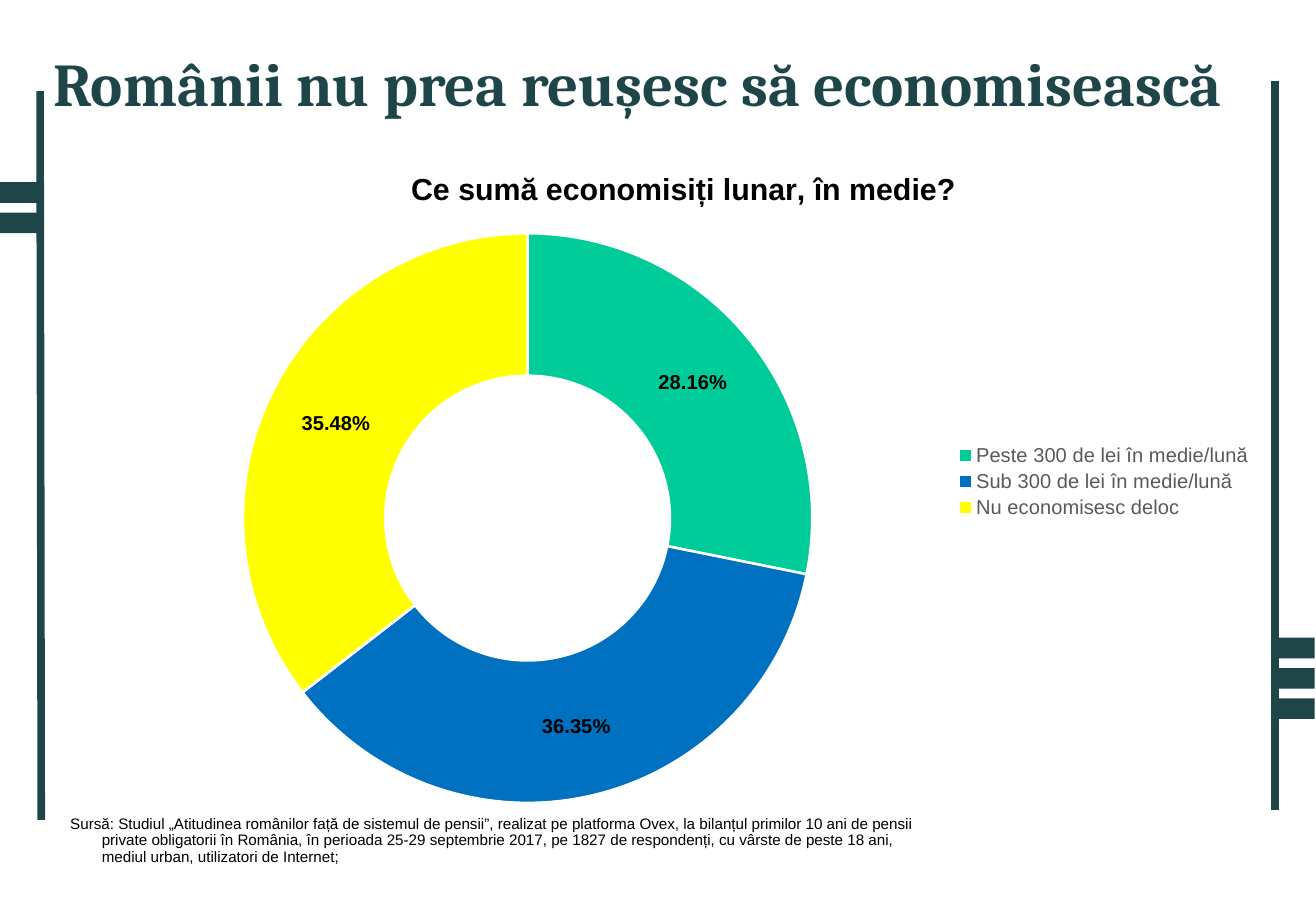
"""Build the slide on how much Romanians save each month."""
import pptx
import pptx.chart.data
import pptx.dml.color
import pptx.enum.chart
import pptx.enum.shapes
import pptx.enum.text
import pptx.util
from lxml import etree

COLORS = {"frame": "1E4649", "text": "000000", "legend": "595959", "gap": "FFFFFF"}
HEADLINE = "Românii nu prea reușesc să economisească"
QUESTION = "Ce sumă economisiți lunar, în medie?"
ANSWERS = [
    ("Peste 300 de lei în medie/lună", 0.2816, "00CC99"),
    ("Sub 300 de lei în medie/lună", 0.3635, "0070C0"),
    ("Nu economisesc deloc", 0.3548, "FFFF00"),
]
SOURCE_NOTE = (
    "Sursă: Studiul „Atitudinea românilor față de sistemul de pensii”, realizat pe "
    "platforma Ovex, la bilanțul primilor 10 ani de pensii private obligatorii în România, "
    "în perioada 25-29 septembrie 2017, pe 1827 de respondenți, cu vârste de peste 18 ani, "
    "mediul urban, utilizatori de Internet;"
)
WIDTH, HEIGHT = 10.84, 7.5
BAR_WIDTH, BAR_HEIGHT, BAR_STEP = 0.33, 0.17, 0.25
BAR_GROUPS = [(0, 1.5, 2), (10.5, 5.25, 3)]
RAILS = [(0.33, 0.75, 0.34, 6.75), (10.5, 0.67, 10.5, 6.67)]
CHART_BOX = (0.84, 1.18, 9.58, 5.57)
RING = {"x": 0.121, "y": 0.133, "w": 0.49, "h": 0.842}
CHART_NS = "http://schemas.openxmlformats.org/drawingml/2006/chart"


def inches(*lengths):
    return [pptx.util.Inches(length) for length in lengths]


def rgb(value):
    return pptx.dml.color.RGBColor.from_string(value)


def style(font, size, color, bold=False, face="Arial"):
    font.size, font.bold, font.name = pptx.util.Pt(size), bold, face
    font.color.rgb = rgb(color)


def add_text(slide, box, text, size, color, **looks):
    frame = slide.shapes.add_textbox(*inches(*box)).text_frame
    frame.word_wrap = True
    paragraph = frame.paragraphs[0]
    paragraph.text = text
    style(paragraph.runs[0].font, size, color, **looks)
    return frame


def add_frame(slide):
    for left, top, count in BAR_GROUPS:
        for index in range(count):
            bar = slide.shapes.add_shape(
                pptx.enum.shapes.MSO_SHAPE.RECTANGLE,
                *inches(left, top + index * BAR_STEP, BAR_WIDTH, BAR_HEIGHT))
            bar.shadow.inherit = False
            bar.fill.solid()
            bar.fill.fore_color.rgb = rgb(COLORS["frame"])
            bar.line.fill.background()
    for ends in RAILS:
        rail = slide.shapes.add_connector(
            pptx.enum.shapes.MSO_CONNECTOR.STRAIGHT, *inches(*ends))
        rail.line.color.rgb = rgb(COLORS["frame"])
        rail.line.width = pptx.util.Pt(4.5)
        etree.SubElement(
            rail._element.spPr,
            "{http://schemas.openxmlformats.org/drawingml/2006/main}effectLst")


def place_ring(chart):
    plot_area = chart._chartSpace.find(f".//{{{CHART_NS}}}plotArea")
    plot_area.find(f".//{{{CHART_NS}}}holeSize").set("val", "75")
    for old_layout in plot_area.findall(f"{{{CHART_NS}}}layout"):
        plot_area.remove(old_layout)
    layout = etree.Element(f"{{{CHART_NS}}}layout")
    manual = etree.SubElement(layout, f"{{{CHART_NS}}}manualLayout")
    settings = {"layoutTarget": "inner", "xMode": "edge", "yMode": "edge", **RING}
    for tag, value in settings.items():
        etree.SubElement(manual, f"{{{CHART_NS}}}{tag}").set("val", str(value))
    plot_area.insert(0, layout)


def add_savings_chart(slide):
    savings = pptx.chart.data.CategoryChartData(number_format="0.00%")
    savings.categories = [answer for answer, _, _ in ANSWERS]
    savings.add_series(QUESTION, [share for _, share, _ in ANSWERS])
    chart = slide.shapes.add_chart(
        pptx.enum.chart.XL_CHART_TYPE.DOUGHNUT, *inches(*CHART_BOX), savings).chart
    style(chart.font, 10, COLORS["text"])

    chart.has_title = True
    chart.chart_title.include_in_layout = False
    chart.chart_title.text_frame.text = QUESTION
    question = chart.chart_title.text_frame.paragraphs[0].runs[0]
    style(question.font, 18, COLORS["text"], bold=True)

    chart.has_legend = True
    chart.legend.position = pptx.enum.chart.XL_LEGEND_POSITION.RIGHT
    chart.legend.include_in_layout = False
    style(chart.legend.font, 11.9, COLORS["legend"])

    ring = chart.plots[0]
    ring.vary_by_categories = True
    for index, (_, _, color) in enumerate(ANSWERS):
        segment = ring.series[0].points[index].format
        segment.fill.solid()
        segment.fill.fore_color.rgb = rgb(color)
        segment.line.color.rgb = rgb(COLORS["gap"])
        segment.line.width = pptx.util.Pt(1.5)
    labels = ring.series[0].data_labels
    labels.show_value = True
    labels.show_percentage = False
    labels.number_format = "0.00%"
    labels.number_format_is_linked = False
    style(labels.font, 11.9, COLORS["text"], bold=True)
    place_ring(chart)


def main():
    deck = pptx.Presentation()
    deck.slide_width, deck.slide_height = inches(WIDTH, HEIGHT)
    slide = deck.slides.add_slide(deck.slide_layouts[6])
    add_frame(slide)
    headline = add_text(slide, (0.34, 0.05, 10.53, 1.25), HEADLINE, 36,
                        COLORS["frame"], bold=True, face="Cambria")
    headline.vertical_anchor = pptx.enum.text.MSO_ANCHOR.MIDDLE
    add_savings_chart(slide)
    note = add_text(slide, (0.38, 6.67, 7.45, 0.55), SOURCE_NOTE, 9, COLORS["text"])
    note.paragraphs[0].line_spacing = 0.9
    indents = note.paragraphs[0]._p.get_or_add_pPr()
    indents.set("marL", str(pptx.util.Inches(0.36)))
    indents.set("indent", str(pptx.util.Inches(-0.26)))
    deck.save("out.pptx")


if __name__ == "__main__":
    main()
